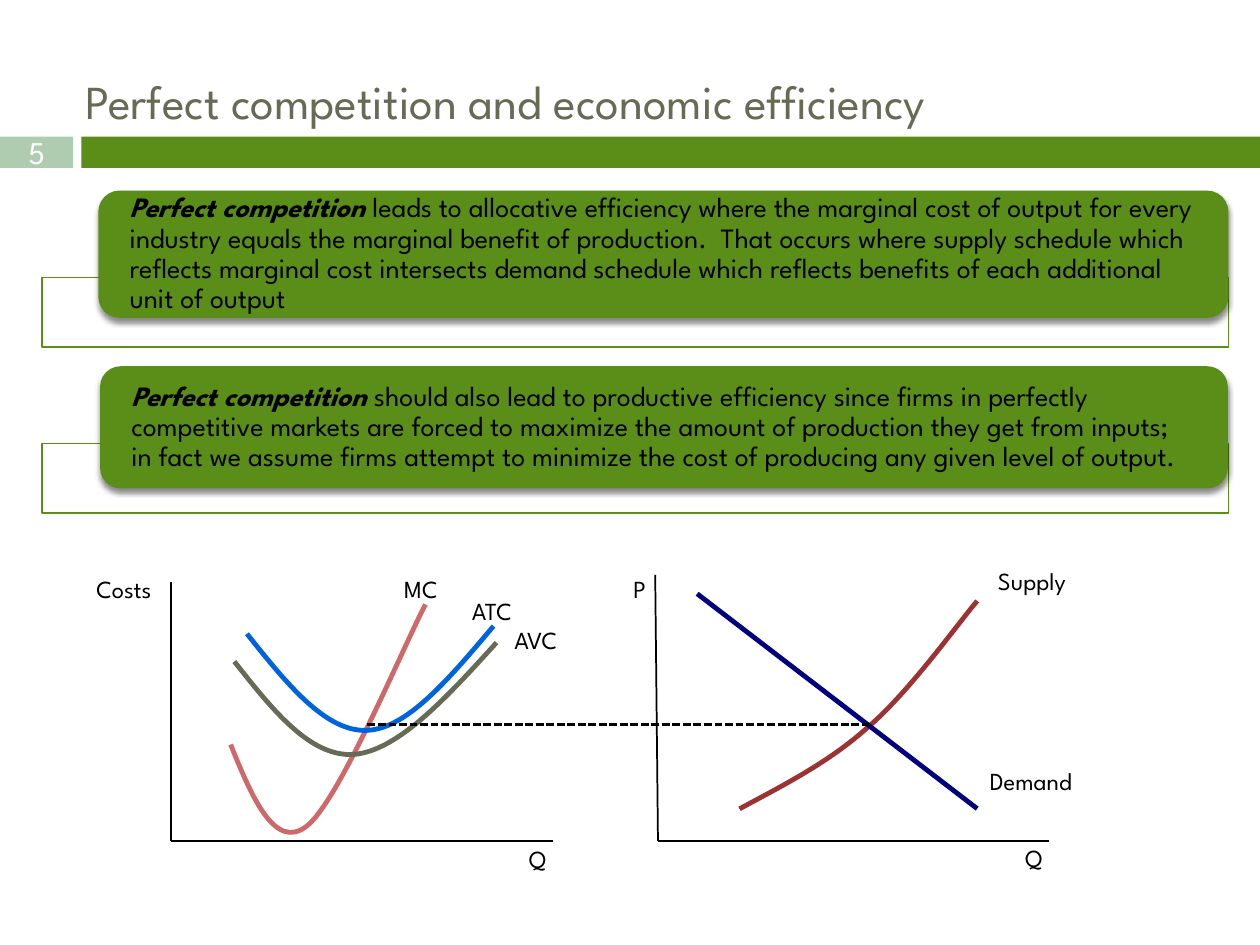
from dataclasses import dataclass

from lxml.etree import SubElement
from pptx import Presentation
from pptx.dml.color import RGBColor
from pptx.enum.dml import MSO_LINE
from pptx.enum.shapes import MSO_CONNECTOR, MSO_SHAPE
from pptx.enum.text import MSO_ANCHOR, PP_ALIGN
from pptx.oxml.ns import qn
from pptx.util import Pt


@dataclass(frozen=True)
class Theme:
    font: str = "League Spartan"
    title_size: float = 27
    number_size: float = 18
    body_size: float = 16
    label_size: float = 14
    green: str = "5A8E19"
    pale_green: str = "B0CCB0"
    olive: str = "676A55"
    white: str = "FFFFFF"
    black: str = "000000"
    navy: str = "000080"
    dark_red: str = "9D3232"
    rose: str = "CF6868"
    blue: str = "0063DE"
    axis_width: float = 1
    dash_width: float = 1.5
    curve_width: float = 2.75
    frame_width: float = 0.79


THEME = Theme()

TITLE = "Perfect competition and economic efficiency"
SLIDE_NUMBER = "5"
LEAD = "Perfect competition "
STATEMENTS = [
    {
        "text": "leads to allocative efficiency where the marginal cost of output for every industry "
                "equals the marginal benefit of production.  That occurs where supply schedule which "
                "reflects marginal cost intersects demand schedule which reflects benefits of each "
                "additional unit of output",
        "panel": (56.2, 108.9, 645.8, 72.7),
        "frame_top": 158.6,
    },
    {
        "text": "should also lead to productive efficiency since firms in perfectly competitive markets "
                "are forced to maximize the amount of production they get from inputs; in fact we assume "
                "firms attempt to minimize the cost of producing any given level of output.",
        "panel": (57.2, 209.3, 644.4, 69.8),
        "frame_top": 253.4,
    },
]
FRAME_LEFT, FRAME_WIDTH, FRAME_HEIGHT = 24, 678.2, 39.7

LABELS = [
    ("Costs", 48, 324.3, 53.3),
    ("MC", 223.9, 324.3, 48.2),
    ("ATC", 262.6, 337, 48.2),
    ("AVC", 286.8, 353.5, 48.2),
    ("P", 354.8, 324.3, 30),
    ("Supply", 563.2, 319.7, 72.7),
    ("Demand", 558.5, 434.2, 77.8),
]
QUANTITY_LABELS = [("Q", 286.6, 480.5, 41), ("Q", 570.2, 480.2, 41)]
LABEL_HEIGHT = 24.5

CURVES = [
    ("dark_red", [(422.6, 462.2), (447.8, 448.6), (473.8, 435.6), (496.1, 415.4),
                  (519.1, 396), (547.9, 355.7), (558.4, 343.4)]),
    ("rose", [(131.8, 425.5), (144, 455.8), (157, 486), (175, 472.3),
              (193.7, 458.6), (231.8, 366.5), (243.2, 345.4)]),
    ("blue", [(141.1, 362.2), (163.4, 390.2), (185.8, 418.3), (209.5, 417.4),
              (232.6, 416.7), (257, 387.4), (282, 357.8)]),
    ("olive", [(133.9, 378), (155.5, 405.4), (177.1, 432.7), (202.1, 431.1),
               (227.5, 429.1), (255.6, 398.2), (283.7, 367.2)]),
]
LINES = [
    ((374.4, 328.5), (376, 480.7), "black", THEME.axis_width, None),
    ((599.5, 480.7), (376, 480.7), "black", THEME.axis_width, None),
    ((97.9, 480.7), (316, 480.7), "black", THEME.axis_width, None),
    ((97.9, 332.6), (97.9, 480.7), "black", THEME.axis_width, None),
    ((398.4, 339.3), (558.4, 462.1), "navy", THEME.curve_width, None),
    ((210, 414), (498, 414), "black", THEME.dash_width, MSO_LINE.SQUARE_DOT),
]


def color(name):
    return RGBColor.from_string(getattr(THEME, name))


def add_run(paragraph, text, size, color_name, emphasis=False):
    run = paragraph.add_run()
    run.text = text
    run.font.name = THEME.font
    run.font.size = Pt(size)
    run.font.bold = run.font.italic = emphasis
    run.font.color.rgb = color(color_name)


def add_box(slide, kind, box, fill, outline=None):
    shape = slide.shapes.add_shape(kind, *map(Pt, box))
    shape.shadow.inherit = False
    shape.fill.solid()
    shape.fill.fore_color.rgb = color(fill)
    if outline:
        shape.line.color.rgb = color(outline)
        shape.line.width = Pt(THEME.frame_width)
    else:
        shape.line.fill.background()
    return shape


def add_drop_shadow(shape):
    effects = shape._element.spPr.find(qn("a:effectLst"))
    shadow = SubElement(effects, qn("a:outerShdw"), blurRad=str(Pt(3)), dist=str(Pt(2.4)),
                        dir="5400000", rotWithShape="0")
    tint = SubElement(shadow, qn("a:srgbClr"), val=THEME.black)
    SubElement(tint, qn("a:alpha"), val="45000")


def add_statement(slide, statement):
    backdrop = add_box(slide, MSO_SHAPE.RECTANGLE,
                       (FRAME_LEFT, statement["frame_top"], FRAME_WIDTH, FRAME_HEIGHT),
                       "white", "green")
    tint = backdrop._element.spPr.find(qn("a:solidFill")).find(qn("a:srgbClr"))
    SubElement(tint, qn("a:alpha"), val="90000")
    panel = add_box(slide, MSO_SHAPE.ROUNDED_RECTANGLE, statement["panel"], "green")
    add_drop_shadow(panel)
    frame = panel.text_frame
    frame.word_wrap = True
    frame.vertical_anchor = MSO_ANCHOR.MIDDLE
    frame.margin_left = frame.margin_right = Pt(14.4)
    frame.margin_top = frame.margin_bottom = 0
    paragraph = frame.paragraphs[0]
    paragraph.alignment = PP_ALIGN.LEFT
    paragraph.line_spacing = 0.9
    add_run(paragraph, LEAD, THEME.body_size, "black", emphasis=True)
    add_run(paragraph, statement["text"], THEME.body_size, "black")


def add_label(slide, text, left, top, width, alignment=PP_ALIGN.LEFT, spacing=1.0):
    box = slide.shapes.add_textbox(Pt(left), Pt(top), Pt(width), Pt(LABEL_HEIGHT))
    box.text_frame.word_wrap = True
    paragraph = box.text_frame.paragraphs[0]
    paragraph.alignment = alignment
    paragraph.line_spacing = spacing
    add_run(paragraph, text, THEME.label_size, "black")


def add_line(slide, start, end, color_name, width, dash):
    line = slide.shapes.add_connector(MSO_CONNECTOR.STRAIGHT, *map(Pt, start + end))
    SubElement(line._element.spPr, qn("a:effectLst"))
    line.line.color.rgb = color(color_name)
    line.line.width = Pt(width)
    if dash:
        line.line.dash_style = dash


def add_curve(slide, color_name, controls):
    start, *others = [tuple(map(Pt, point)) for point in controls]
    builder = slide.shapes.build_freeform(*start)
    builder.add_line_segments(others, close=False)
    curve = builder.convert_to_shape()
    outline = next(curve._element.spPr.iter(qn("a:path")))
    segments = outline.findall(qn("a:lnTo"))
    for first in range(0, len(segments), 3):
        bezier = SubElement(outline, qn("a:cubicBezTo"))
        for segment in segments[first:first + 3]:
            bezier.append(segment[0])
            outline.remove(segment)
    curve.shadow.inherit = False
    curve.fill.background()
    curve.line.color.rgb = color(color_name)
    curve.line.width = Pt(THEME.curve_width)


def add_header(slide):
    number = add_box(slide, MSO_SHAPE.RECTANGLE, (0, 78, 41.9, 18), "pale_green")
    frame = number.text_frame
    frame.margin_top = frame.margin_bottom = 0
    frame.vertical_anchor = MSO_ANCHOR.MIDDLE
    frame.paragraphs[0].alignment = PP_ALIGN.CENTER
    add_run(frame.paragraphs[0], SLIDE_NUMBER, THEME.number_size, "white")
    add_box(slide, MSO_SHAPE.RECTANGLE, (46.5, 78, 673.5, 18), "green")

    title = slide.shapes.title
    title.left, title.top, title.width, title.height = map(Pt, (41.8, 37.4, 743.8, 46.8))
    title.text_frame.vertical_anchor = MSO_ANCHOR.TOP
    title.text_frame.paragraphs[0].alignment = PP_ALIGN.LEFT
    add_run(title.text_frame.paragraphs[0], TITLE, THEME.title_size, "olive")


def main():
    presentation = Presentation()
    presentation.slide_width, presentation.slide_height = Pt(720), Pt(540)
    slide = presentation.slides.add_slide(presentation.slide_layouts[5])
    add_header(slide)
    for statement in STATEMENTS:
        add_statement(slide, statement)
    for curve in CURVES:
        add_curve(slide, *curve)
    for line in LINES:
        add_line(slide, *line)
    for label in LABELS:
        add_label(slide, *label)
    for label in QUANTITY_LABELS:
        add_label(slide, *label, alignment=PP_ALIGN.CENTER, spacing=0.9)
    presentation.save("out.pptx")


if __name__ == "__main__":
    main()
